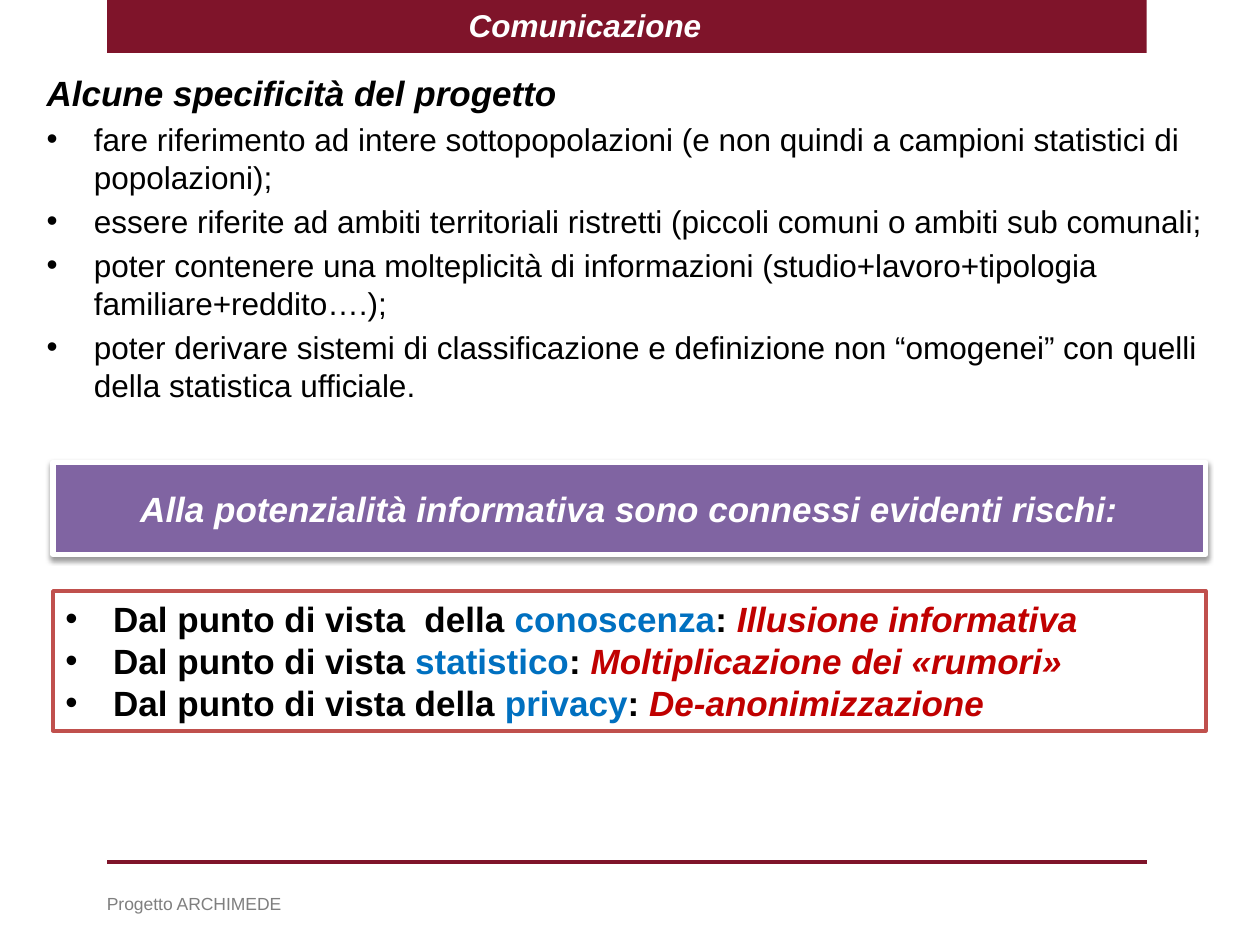
from dataclasses import dataclass
from typing import NamedTuple

from lxml.etree import SubElement
from pptx import Presentation
from pptx.dml.color import RGBColor
from pptx.enum.shapes import MSO_CONNECTOR as Connector, MSO_SHAPE as Shape
from pptx.enum.text import MSO_ANCHOR as Anchor, MSO_AUTO_SIZE as AutoSize, PP_ALIGN as Align
from pptx.oxml.ns import qn
from pptx.util import Inches, Pt


@dataclass(frozen=True)
class Theme:
    font: str = "Arial"
    maroon: str = "7F142A"
    purple: str = "8064A2"
    border: str = "C0504D"
    blue: str = "0070C0"
    red: str = "C00000"
    black: str = "000000"
    white: str = "FFFFFF"
    grey: str = "7F7F7F"
    large: int = 20
    medium: int = 18
    small: int = 10


class Area(NamedTuple):
    left: float
    top: float
    width: float
    height: float

    def lengths(self) -> list:
        return [Inches(value) for value in self]


class Risk(NamedTuple):
    lead: str
    subject: str
    effect: str


THEME = Theme()
HEADING = "Alcune specificità del progetto"
FEATURES = [
    "fare riferimento ad intere sottopopolazioni (e non quindi a campioni statistici di popolazioni);",
    "essere riferite ad ambiti territoriali ristretti (piccoli comuni o ambiti sub comunali;",
    "poter contenere una molteplicità di informazioni (studio+lavoro+tipologia familiare+reddito….);",
    "poter derivare sistemi di classificazione e definizione non “omogenei” con quelli della statistica ufficiale.",
]
RISKS = [
    Risk("Dal punto di vista  della ", "conoscenza", "Illusione informativa"),
    Risk("Dal punto di vista ", "statistico", "Moltiplicazione dei «rumori»"),
    Risk("Dal punto di vista della ", "privacy", "De-anonimizzazione"),
]


def style(span, size: int, color: str, bold: bool = False, italic: bool = False) -> None:
    font = span.font
    font.name, font.size = THEME.font, Pt(size)
    font.bold, font.italic = bold, italic
    font.color.rgb = RGBColor.from_string(color)


def place(shape, area: Area) -> None:
    shape.left, shape.top, shape.width, shape.height = area.lengths()


def set_bullet(para, character: str = "", indent: float = 0) -> None:
    properties = para._p.get_or_add_pPr()
    properties.set("marL", str(Inches(indent)))
    properties.set("indent", str(-Inches(indent)))
    if character:
        SubElement(properties, qn("a:buFont"), typeface=THEME.font)
        SubElement(properties, qn("a:buChar"), char=character)
    else:
        SubElement(properties, qn("a:buNone"))


def add_rectangle(page, area: Area, fill: str, line: str = "", weight: float = 0):
    box = page.shapes.add_shape(Shape.RECTANGLE, *area.lengths())
    box.shadow.inherit = False
    box.fill.solid()
    box.fill.fore_color.rgb = RGBColor.from_string(fill)
    if line:
        box.line.color.rgb = RGBColor.from_string(line)
        box.line.width = Pt(weight)
    else:
        box.line.fill.background()
    return box


def add_shadow(box) -> None:
    effects = box.element.spPr.find(qn("a:effectLst"))
    shadow = SubElement(effects, qn("a:outerShdw"), blurRad=str(Pt(3.1)), dist=str(Pt(1.6)),
                        dir=str(90 * 60000), rotWithShape="0")
    color = SubElement(shadow, qn("a:srgbClr"), val=THEME.black)
    SubElement(color, qn("a:alpha"), val="38000")


def add_header(page) -> None:
    title = page.shapes.title
    band = add_rectangle(page, Area(0.85, 0, 8.25, 0.42), THEME.maroon)
    title.element.addprevious(band.element)
    place(title, Area(3.62, 0, 2.07, 0.4))
    frame = title.text_frame
    frame.text = "Comunicazione"
    frame.word_wrap = False
    frame.auto_size = AutoSize.SHAPE_TO_FIT_TEXT
    frame.vertical_anchor = Anchor.TOP
    para = frame.paragraphs[0]
    para.alignment = Align.LEFT
    style(para.runs[0], THEME.medium, THEME.white, True, True)


def add_features(page) -> None:
    body = page.placeholders[1]
    place(body, Area(0.27, 0.52, 9.45, 2.99))
    frame = body.text_frame
    frame.text = "\n".join([HEADING, *FEATURES])
    frame.auto_size = AutoSize.NONE
    frame.margin_bottom = Inches(0.2)
    heading, *items = frame.paragraphs
    heading.space_before = Pt(0)
    set_bullet(heading)
    style(heading.runs[0], THEME.large, THEME.black, True, True)
    for para in items:
        style(para.runs[0], THEME.medium, THEME.black)


def add_banner(page) -> None:
    banner = add_rectangle(page, Area(0.42, 3.67, 9.15, 0.73), THEME.purple, THEME.white, 3)
    add_shadow(banner)
    frame = banner.text_frame
    frame.text = "Alla potenzialità informativa sono connessi evidenti rischi:"
    frame.vertical_anchor = Anchor.MIDDLE
    para = frame.paragraphs[0]
    para.alignment = Align.CENTER
    style(para.runs[0], THEME.large, THEME.white, True, True)


def add_risks(page) -> None:
    box = add_rectangle(page, Area(0.42, 4.69, 9.15, 1.11), THEME.white, THEME.border, 2)
    frame = box.text_frame
    frame.word_wrap = True
    frame.auto_size = AutoSize.SHAPE_TO_FIT_TEXT
    frame.vertical_anchor = Anchor.TOP
    for index, risk in enumerate(RISKS):
        para = frame.add_paragraph() if index else frame.paragraphs[0]
        para.alignment = Align.LEFT
        set_bullet(para, "•", 0.38)
        parts = [(risk.lead, THEME.black), (risk.subject, THEME.blue),
                 (": ", THEME.black), (risk.effect, THEME.red)]
        for text, color in parts:
            span = para.add_run()
            span.text = text
            style(span, THEME.large, color, True, color == THEME.red)


def add_footer(page) -> None:
    rule = page.shapes.add_connector(
        Connector.STRAIGHT, Inches(0.85), Inches(6.84), Inches(9.1), Inches(6.84))
    rule.line.color.rgb = RGBColor.from_string(THEME.maroon)
    rule.line.width = Pt(2)
    SubElement(rule.element.spPr, qn("a:effectLst"))
    box = page.shapes.add_textbox(*Area(0.75, 7.04, 5.13, 0.27).lengths())
    frame = box.text_frame
    frame.text = "Progetto ARCHIMEDE"
    frame.word_wrap = True
    frame.auto_size = AutoSize.SHAPE_TO_FIT_TEXT
    style(frame.paragraphs[0].runs[0], THEME.small, THEME.grey)


def main() -> None:
    deck = Presentation()
    deck.slide_width, deck.slide_height = Inches(10), Inches(7.5)
    page = deck.slides.add_slide(deck.slide_layouts[1])
    add_header(page)
    add_features(page)
    add_banner(page)
    add_risks(page)
    add_footer(page)
    deck.save("out.pptx")


if __name__ == "__main__":
    main()
